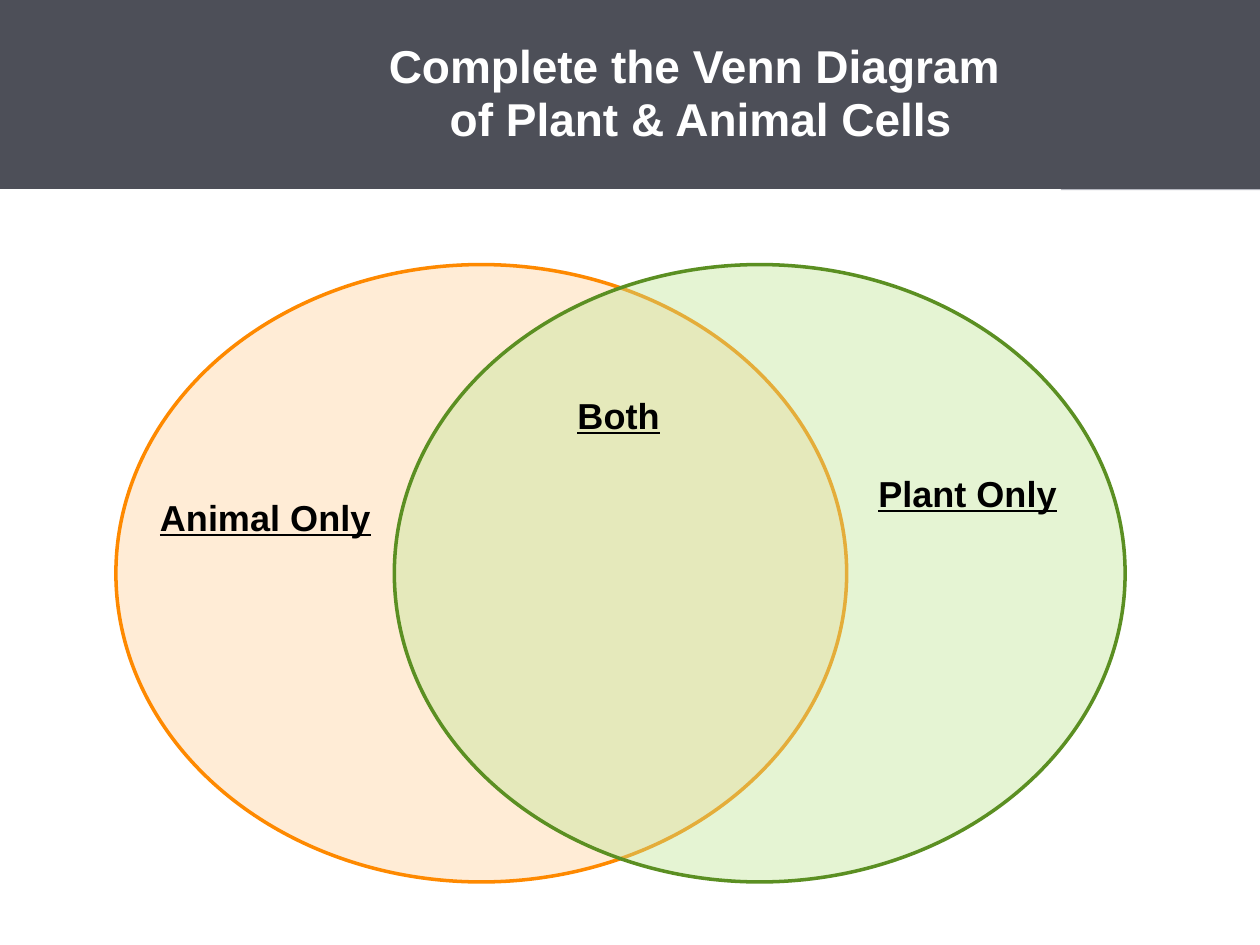
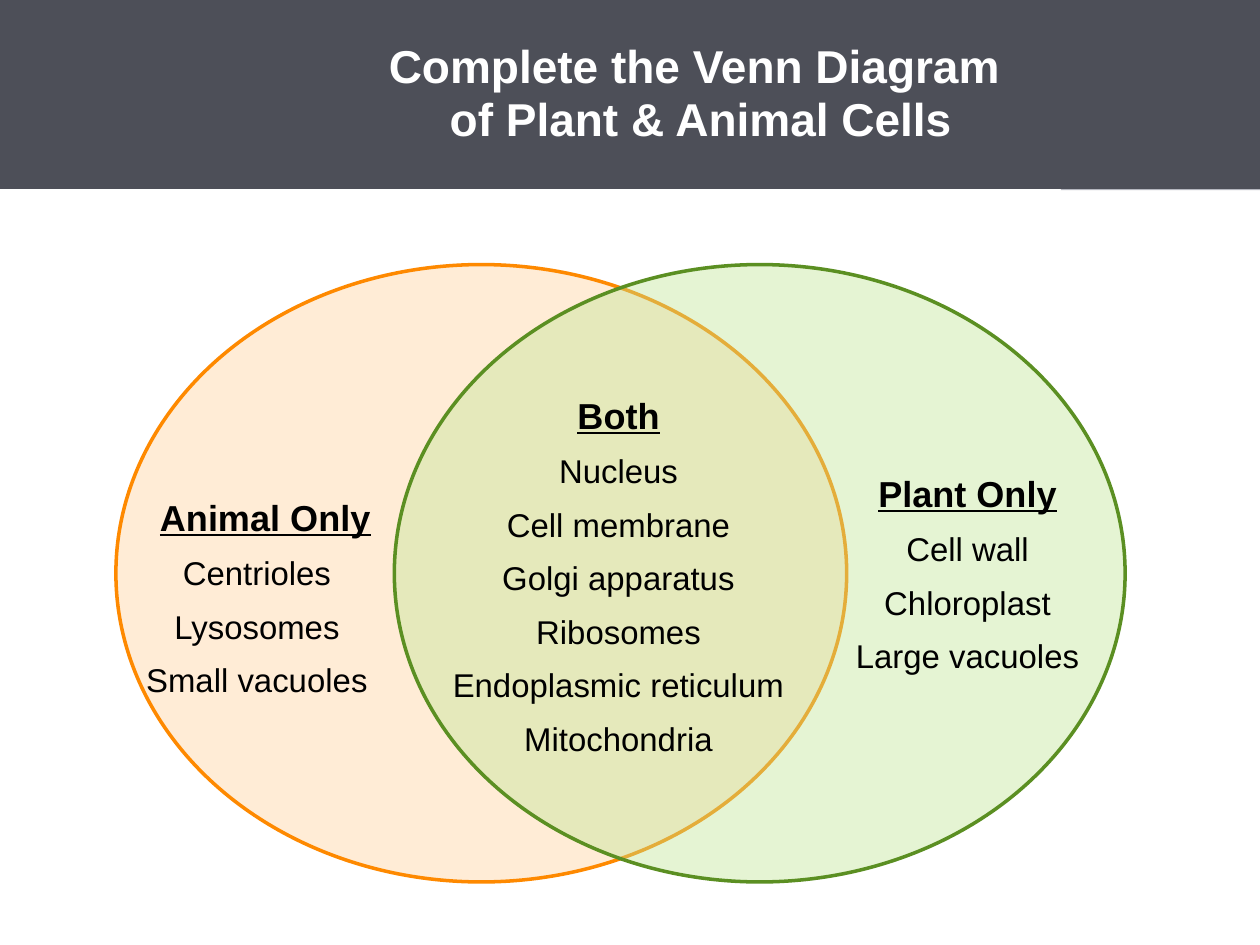
from pptx import Presentation
from pptx.dml.color import RGBColor
from pptx.enum.shapes import MSO_SHAPE as Kind
from pptx.enum.text import MSO_ANCHOR as Anchor, PP_ALIGN as Align
from pptx.oxml.ns import qn
from pptx.util import Inches, Pt
from lxml.etree import SubElement

WHITE = RGBColor(0xFF, 0xFF, 0xFF)
BLACK = RGBColor(0x00, 0x00, 0x00)
SLATE = RGBColor(0x4D, 0x4F, 0x58)
GRAY = RGBColor(0xB5, 0xB7, 0xBF)
PEACH = RGBColor(0xFF, 0xD0, 0x99)
ORANGE = RGBColor(0xFE, 0x89, 0x00)
LIME = RGBColor(0xBE, 0xE5, 0x93)
GREEN = RGBColor(0x5B, 0x8F, 0x22)

TITLE = ("Complete the Venn Diagram ", "of Plant & Animal Cells")

# Head, head alignment, left, top, width, items
PARTS = (
    ("Plant Only", Align.CENTER, 6.68, 3.64, 2,
     ("Cell wall", "Chloroplast", "Large vacuoles")),
    ("Animal Only", Align.RIGHT, 1.04, 3.83, 2,
     ("Centrioles", "Lysosomes", "Small vacuoles")),
    ("Both", Align.CENTER, 3.33, 3.02, 3.16,
     ("Nucleus", "Cell membrane", "Golgi apparatus", "Ribosomes",
      "Endoplasmic reticulum", "Mitochondria")),
)


class Deck:
    font = "Arial"
    head = 20.6
    body = 18.8

    def __init__(self):
        self.prs = Presentation()
        self.prs.slide_width = Inches(10)
        self.prs.slide_height = Inches(7.5)
        self.slide = None

    def page(self):
        self.slide = self.prs.slides.add_slide(self.prs.slide_layouts[6])

    def shape(self, home, kind, box, fill, line=None, alpha=None):
        item = home.add_shape(kind, *map(Inches, box))
        item.shadow.inherit = False
        item.fill.solid()
        item.fill.fore_color.rgb = fill
        if alpha:
            tint = item.fill._xPr.find(qn("a:solidFill"))[0]
            SubElement(tint, qn("a:alpha"), val=str(alpha * 1000))
        if line:
            item.line.color.rgb = line
            item.line.width = Pt(2)
        else:
            item.line.fill.background()
        return item

    def run(self, para, text, size, color, bold=False, under=False):
        run = para.add_run()
        run.text = text
        font = run.font
        font.name, font.size, font.color.rgb = self.font, Pt(size), color
        font.bold, font.underline = bold, under

    def title(self, lines):
        # Gray tab just shows below the band
        draw = self.slide.shapes
        self.shape(draw, Kind.RECTANGLE, (8.42, 0, 1.58, 1.51), GRAY)
        band = self.shape(draw, Kind.RECTANGLE, (0, 0, 10, 1.5), SLATE)
        frame = band.text_frame
        frame.word_wrap = True
        frame.vertical_anchor = Anchor.MIDDLE
        frame.margin_left = Inches(1.29)
        frame.margin_right = Inches(0.17)
        frame.margin_top = frame.margin_bottom = Inches(0.07)
        para = frame.paragraphs[0]
        para.alignment = Align.CENTER
        para.line_spacing = 0.95
        for num, line in enumerate(lines):
            if num:
                para.add_line_break()
            self.run(para, line, 26.3, WHITE, bold=True)

    def venn(self):
        group = self.slide.shapes.add_group_shape().shapes
        for left, fill, line in ((0.92, PEACH, ORANGE), (3.13, LIME, GREEN)):
            self.shape(group, Kind.OVAL, (left, 2.1, 5.8, 4.9), fill, line, 40)

    def label(self, head, align, left, top, width, items):
        high = 0.55 + 0.41 * len(items)
        box = self.slide.shapes.add_textbox(
            *map(Inches, (left, top, width, high)))
        frame = box.text_frame
        frame.word_wrap = True
        para = frame.paragraphs[0]
        para.alignment = align
        para.line_spacing = 1.15
        self.run(para, head, self.head, BLACK, bold=True, under=True)
        for item in items:
            para = frame.add_paragraph()
            para.alignment = Align.CENTER
            para.line_spacing = 1.15
            para.space_before = Pt(4.7)
            self.run(para, item, self.body, BLACK)


def main():
    deck = Deck()
    # Blank diagram first, then the one with answers
    for solved in (False, True):
        deck.page()
        deck.title(TITLE)
        deck.venn()
        for *spot, items in PARTS:
            deck.label(*spot, items if solved else ())
    deck.prs.save("out.pptx")


if __name__ == "__main__":
    main()
